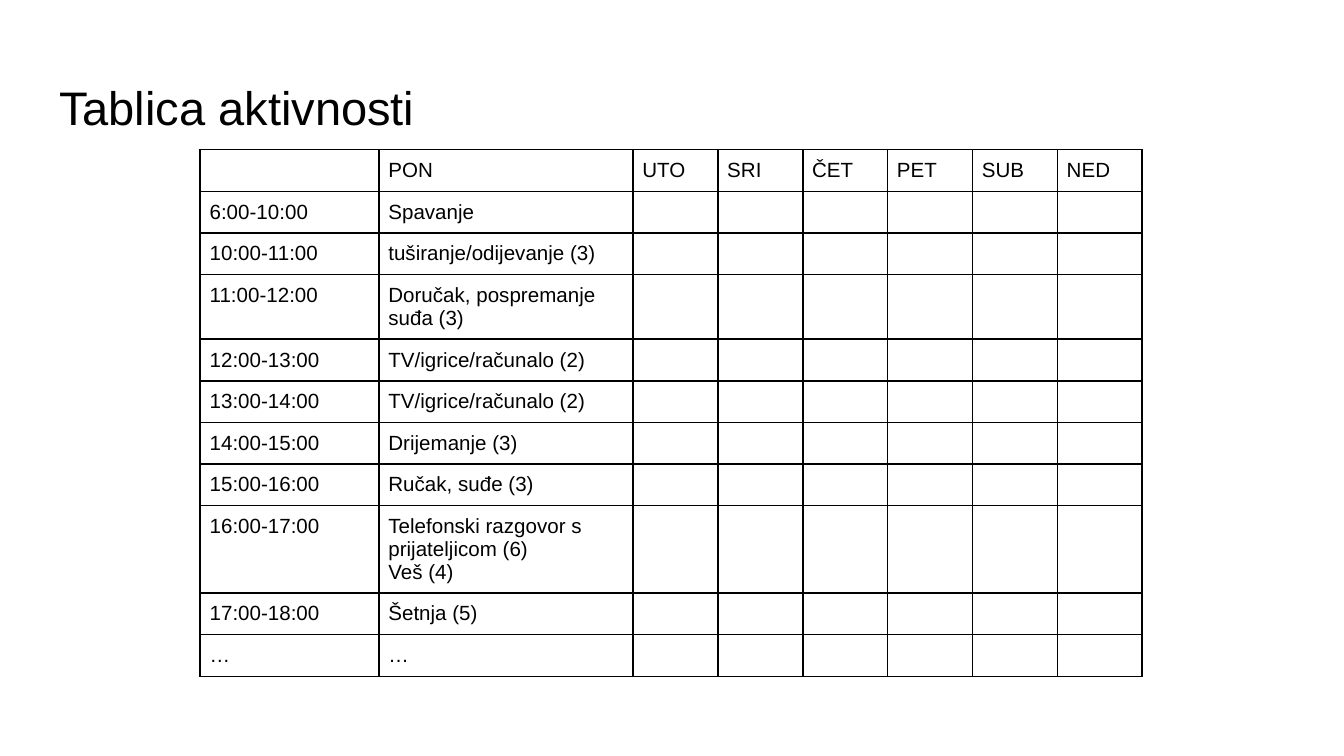
from lxml.etree import SubElement
from pptx import Presentation
from pptx.dml.color import RGBColor
from pptx.enum.text import MSO_ANCHOR as Anchor, MSO_AUTO_SIZE as AutoSize, PP_ALIGN as Align
from pptx.oxml.ns import qn
from pptx.util import Inches, Pt

BLACK = RGBColor(0x00, 0x00, 0x00)

DAYS = ["", "PON", "UTO", "SRI", "ČET", "PET", "SUB", "NED"]
MONDAY = [
    ("6:00-10:00", "Spavanje"),
    ("10:00-11:00", "tuširanje/odijevanje (3)"),
    ("11:00-12:00", "Doručak, pospremanje suđa (3)"),
    ("12:00-13:00", "TV/igrice/računalo (2)"),
    ("13:00-14:00", "TV/igrice/računalo (2)"),
    ("14:00-15:00", "Drijemanje (3)"),
    ("15:00-16:00", "Ručak, suđe (3)"),
    ("16:00-17:00", "Telefonski razgovor s prijateljicom (6)\nVeš (4)"),
    ("17:00-18:00", "Šetnja (5)"),
    ("…", "…"),
]
SCHEDULE = [DAYS] + [[hours, activity] + [""] * 6 for hours, activity in MONDAY]
TABLE_WIDTH, HOURS_WIDTH, MONDAY_WIDTH = 7.01, 1.33, 1.89
DAY_WIDTH = (TABLE_WIDTH - HOURS_WIDTH - MONDAY_WIDTH) / 6
COLUMN_WIDTHS = [HOURS_WIDTH, MONDAY_WIDTH] + [DAY_WIDTH] * 6
TEXT_LINES = [1, 1, 1, 2, 1, 1, 1, 1, 3, 1, 1]


class SlideBuilder:
    font = "Arial"
    title_size = 25.2
    cell_size = 11
    cell_margin = 0.07
    line_height = 0.17
    border_width = 1

    def __init__(self, deck, layout):
        self.width, self.height = deck.slide_width, deck.slide_height
        self.slide = deck.slides.add_slide(deck.slide_layouts[layout])

    def format_runs(self, frame, size):
        for paragraph in frame.paragraphs:
            paragraph.alignment = Align.LEFT
            for run in paragraph.runs:
                run.font.name = self.font
                run.font.size = Pt(size)
                run.font.bold = False
                run.font.color.rgb = BLACK

    def title(self, text, left, top, width, height):
        heading = self.slide.shapes.title
        heading.left, heading.width = int(left * self.width), int(width * self.width)
        heading.top, heading.height = int(top * self.height), int(height * self.height)
        frame = heading.text_frame
        frame.text = text
        frame.auto_size = AutoSize.NONE
        frame.vertical_anchor = Anchor.BOTTOM
        frame.margin_left = frame.margin_right = Inches(0.1)
        frame.margin_top = frame.margin_bottom = Inches(0.1)
        self.format_runs(frame, self.title_size)

    def cell(self, cell, text):
        margin = Inches(self.cell_margin)
        cell.margin_left = cell.margin_right = margin
        cell.margin_top = cell.margin_bottom = margin
        cell.vertical_anchor = Anchor.TOP
        cell.text_frame.text = text
        self.format_runs(cell.text_frame, self.cell_size)
        if not text:
            paragraph = cell.text_frame.paragraphs[0]._p
            ending = SubElement(paragraph, qn("a:endParaRPr"), sz=str(self.cell_size * 100))
            SubElement(ending, qn("a:latin"), typeface=self.font)
        self.borders(cell)
        cell.fill.background()

    def borders(self, cell):
        properties = cell._tc.get_or_add_tcPr()
        for side in ("a:lnL", "a:lnR", "a:lnT", "a:lnB"):
            line = SubElement(properties, qn(side), w=str(int(Pt(self.border_width))))
            fill = SubElement(line, qn("a:solidFill"))
            SubElement(fill, qn("a:srgbClr"), val=str(BLACK))

    def table(self, rows, column_widths, text_lines, left, top):
        heights = [2 * self.cell_margin + lines * self.line_height for lines in text_lines]
        grid = self.slide.shapes.add_table(
            len(rows), len(column_widths),
            int(left * self.width), int(top * self.height),
            Inches(sum(column_widths)), Inches(sum(heights)),
        ).table
        grid.first_row = grid.horz_banding = False
        for column, width in zip(grid.columns, column_widths):
            column.width = Inches(width)
        for row, height, texts in zip(grid.rows, heights, rows):
            row.height = Inches(height)
            for cell, text in zip(row.cells, texts):
                self.cell(cell, text)


def main():
    deck = Presentation()
    deck.slide_width = Inches(10)
    deck.slide_height = deck.slide_width * 9 // 16
    builder = SlideBuilder(deck, layout=5)
    builder.title("Tablica aktivnosti", 0.034, 0.084, 0.932, 0.112)
    builder.table(SCHEDULE, COLUMN_WIDTHS, TEXT_LINES, 0.149, 0.198)
    deck.save("out.pptx")


if __name__ == "__main__":
    main()
